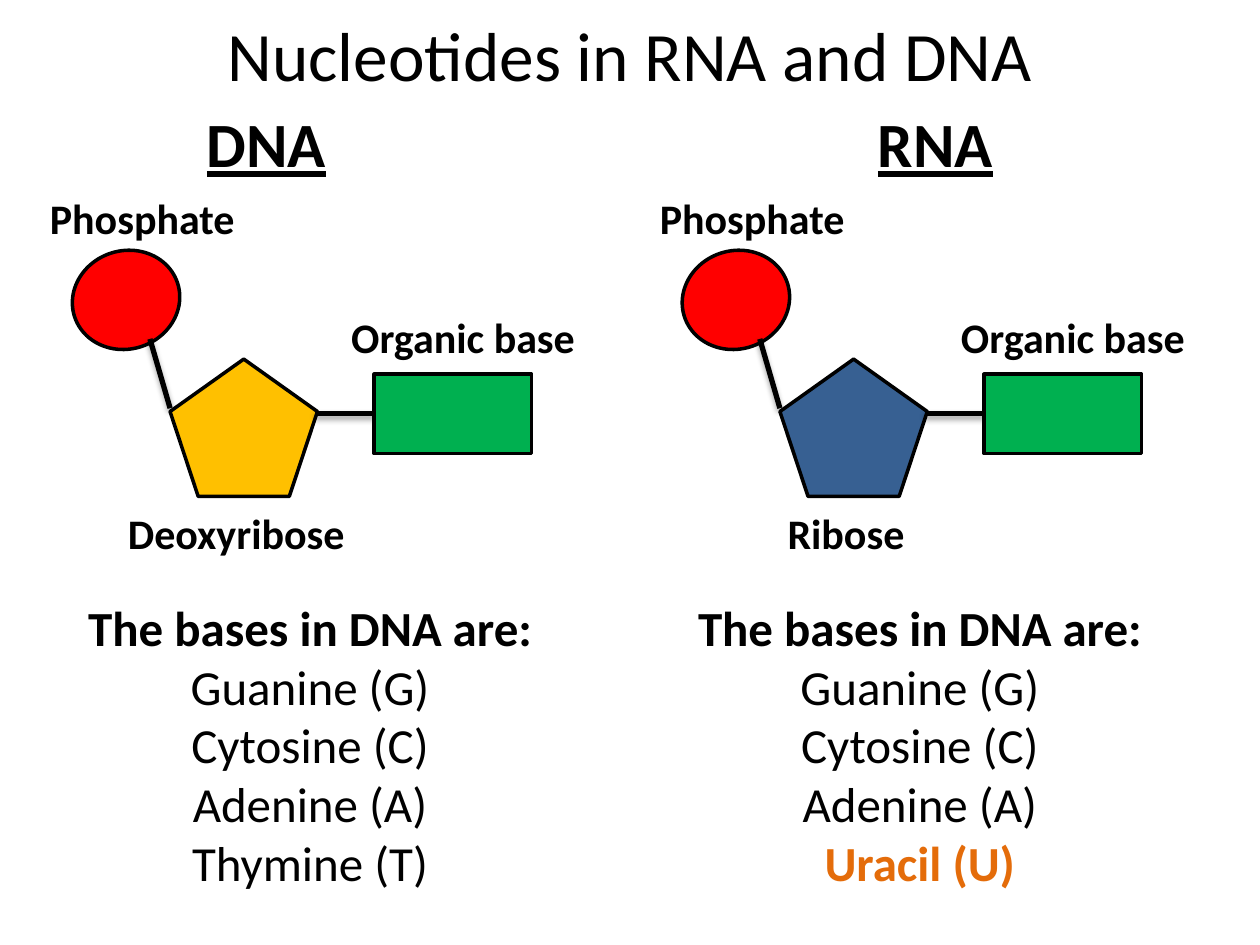
"""Build a slide comparing the nucleotides of DNA and RNA."""
from dataclasses import dataclass

import lxml.etree
import pptx
import pptx.dml.color
import pptx.enum.shapes
import pptx.enum.text
import pptx.oxml.ns
import pptx.util

Inches = pptx.util.Inches
Pt = pptx.util.Pt
Shapes = pptx.enum.shapes.MSO_SHAPE
FONT = "Calibri"
BLACK = "000000"


@dataclass(frozen=True)
class Box:
    left: float
    top: float
    width: float
    height: float


@dataclass(frozen=True)
class Nucleotide:
    acid: str
    left: float
    heading_left: float
    sugar: str
    sugar_color: str
    last_base: str
    last_base_color: str
    last_base_bold: bool


NUCLEOTIDES = (
    Nucleotide("DNA", 0, 1.02, "Deoxyribose", "FFC000", "Thymine (T)", BLACK, False),
    Nucleotide("RNA", 4.84, 6.33, "Ribose", "376092", "Uracil (U)", "E46C0A", True),
)
SHARED_BASES = ("Guanine (G)", "Cytosine (C)", "Adenine (A)")


def rgb(color: str) -> pptx.dml.color.RGBColor:
    """Turn a hex string into a colour."""
    return pptx.dml.color.RGBColor.from_string(color)


def place(shape, box: Box) -> None:
    """Move and size a shape."""
    shape.left, shape.top = Inches(box.left), Inches(box.top)
    shape.width, shape.height = Inches(box.width), Inches(box.height)


def add_run(paragraph, text: str, size: float, color: str = BLACK,
            bold: bool = False, underline: bool = False) -> None:
    """Add one formatted run to a centred paragraph."""
    paragraph.alignment = pptx.enum.text.PP_ALIGN.CENTER
    run = paragraph.add_run()
    run.text = text
    run.font.name, run.font.size = FONT, Pt(size)
    run.font.bold, run.font.underline = bold, underline
    run.font.color.rgb = rgb(color)


def add_label(slide, box: Box, text: str, size: float, underline: bool = False) -> None:
    """Add a bold one-line label."""
    label = slide.shapes.add_textbox(0, 0, 0, 0)
    place(label, box)
    label.text_frame.word_wrap = True
    add_run(label.text_frame.paragraphs[0], text, size, bold=True, underline=underline)


def add_part(slide, preset, box: Box, color: str, rotation: float = 0):
    """Add a filled, outlined part of the molecule."""
    part = slide.shapes.add_shape(preset, 0, 0, 0, 0)
    place(part, box)
    part.rotation = rotation
    part.shadow.inherit = False
    part.fill.solid()
    part.fill.fore_color.rgb = rgb(color)
    part.line.color.rgb = rgb(BLACK)
    part.line.width = Pt(2)
    return part


def add_bond(slide, x1: float, y1: float, x2: float, y2: float):
    """Add a bond with a soft shadow below it."""
    bond = slide.shapes.add_connector(
        pptx.enum.shapes.MSO_CONNECTOR.STRAIGHT,
        Inches(x1), Inches(y1), Inches(x2), Inches(y2))
    bond.line.color.rgb = rgb(BLACK)
    bond.line.width = Pt(3)
    qn = pptx.oxml.ns.qn
    effects = lxml.etree.SubElement(bond._element.spPr, qn("a:effectLst"))
    shadow = lxml.etree.SubElement(
        effects, qn("a:outerShdw"), blurRad=str(Pt(3.1)), dist=str(Pt(1.8)),
        dir="5400000", rotWithShape="0")
    shade = lxml.etree.SubElement(shadow, qn("a:srgbClr"), val=BLACK)
    lxml.etree.SubElement(shade, qn("a:alpha"), val="35000")
    return bond


def draw_nucleotide(slide, nucleotide: Nucleotide) -> None:
    """Draw the heading, molecule and labels of one nucleotide."""
    left = nucleotide.left
    base_box = Box(left + 2.97, 2.97, 1.25, 0.63)
    base_middle = base_box.top + base_box.height / 2
    add_part(slide, Shapes.OVAL, Box(left + 0.57, 1.99, 0.86, 0.78), "FF0000", 161.9)
    add_bond(slide, left + 1.19, 2.69, left + 1.35, 3.24)
    add_part(slide, Shapes.REGULAR_PENTAGON, Box(left + 1.35, 2.85, 1.17, 1.09),
             nucleotide.sugar_color)
    base_bond = add_bond(slide, left + 2.5, base_middle, base_box.left, base_middle)
    base = add_part(slide, Shapes.RECTANGLE, base_box, "00B050")
    base_bond.end_connect(base, 1)
    add_label(slide, Box(left + 0.23, 1.48, 1.8, 0.5), "Phosphate", 24)
    add_label(slide, Box(left + 0.86, 3.98, 2.03, 0.5), nucleotide.sugar, 24)
    add_label(slide, Box(left + 2.58, 2.42, 2.19, 0.5), "Organic base", 24)
    add_label(slide, Box(nucleotide.heading_left, 0.78, 2.19, 0.71),
              nucleotide.acid, 36, underline=True)


def fill_bases(placeholder, nucleotide: Nucleotide) -> None:
    """List the bases of one nucleotide without bullets."""
    place(placeholder, Box(nucleotide.left + 0.39, 4.69, 4.14, 2.46))
    frame = placeholder.text_frame
    frame.auto_size = pptx.enum.text.MSO_AUTO_SIZE.NONE
    lines = [("The bases in DNA are:", BLACK, True)]
    lines += [(name, BLACK, False) for name in SHARED_BASES]
    lines.append((nucleotide.last_base, nucleotide.last_base_color,
                  nucleotide.last_base_bold))
    for index, (text, color, bold) in enumerate(lines):
        paragraph = frame.add_paragraph() if index else frame.paragraphs[0]
        properties = paragraph._p.get_or_add_pPr()
        properties.set("marL", "0")
        properties.set("indent", "0")
        lxml.etree.SubElement(properties, pptx.oxml.ns.qn("a:buNone"))
        paragraph.space_before = Pt(0)
        add_run(paragraph, text, 28, color, bold)


def main() -> None:
    """Build and save the slide."""
    deck = pptx.Presentation()
    deck.slide_width, deck.slide_height = Inches(10), Inches(7.5)
    slide = deck.slides.add_slide(deck.slide_layouts.get_by_name("Two Content"))
    title = slide.shapes.title
    place(title, Box(0.5, 0.23, 9, 0.39))
    title.text_frame.auto_size = pptx.enum.text.MSO_AUTO_SIZE.NONE
    title.text_frame.vertical_anchor = pptx.enum.text.MSO_ANCHOR.MIDDLE
    add_run(title.text_frame.paragraphs[0], "Nucleotides in RNA and DNA", 39.6)
    for number, nucleotide in enumerate(NUCLEOTIDES, start=1):
        draw_nucleotide(slide, nucleotide)
        fill_bases(slide.placeholders[number], nucleotide)
    deck.save("out.pptx")


if __name__ == "__main__":
    main()
